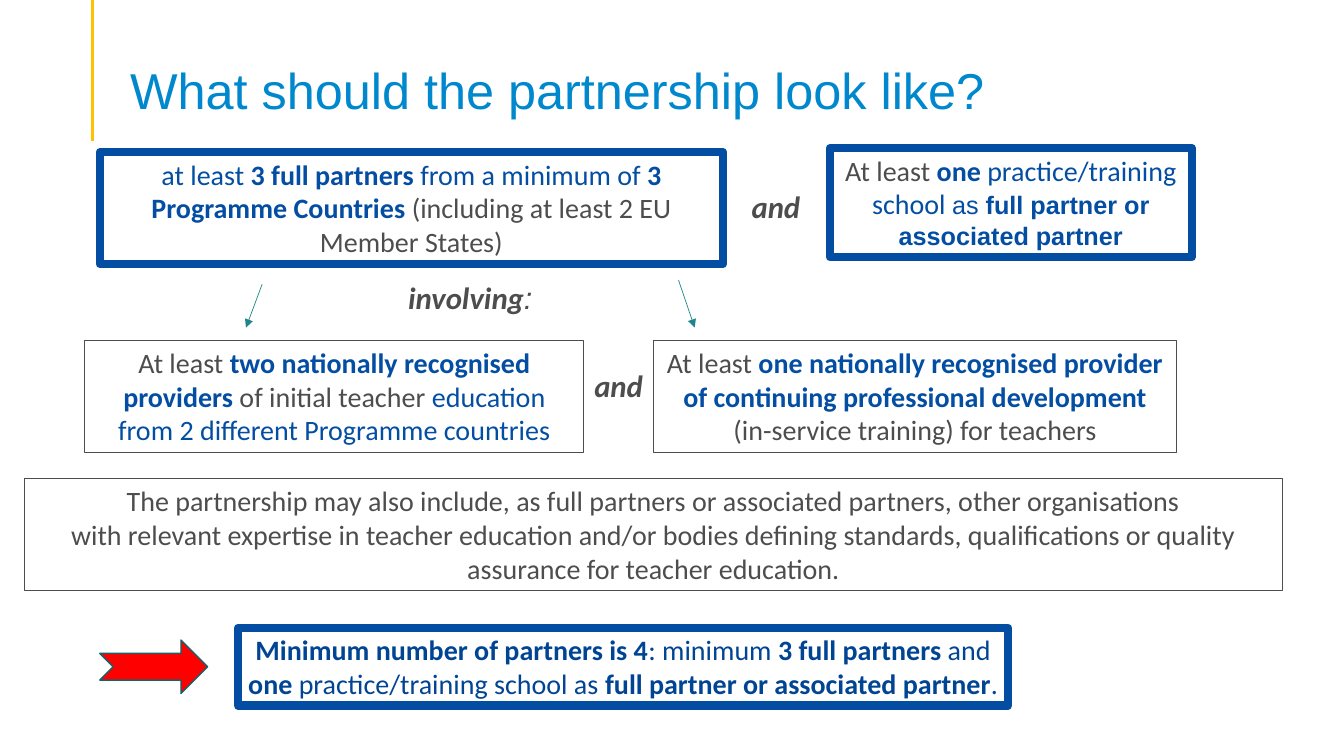
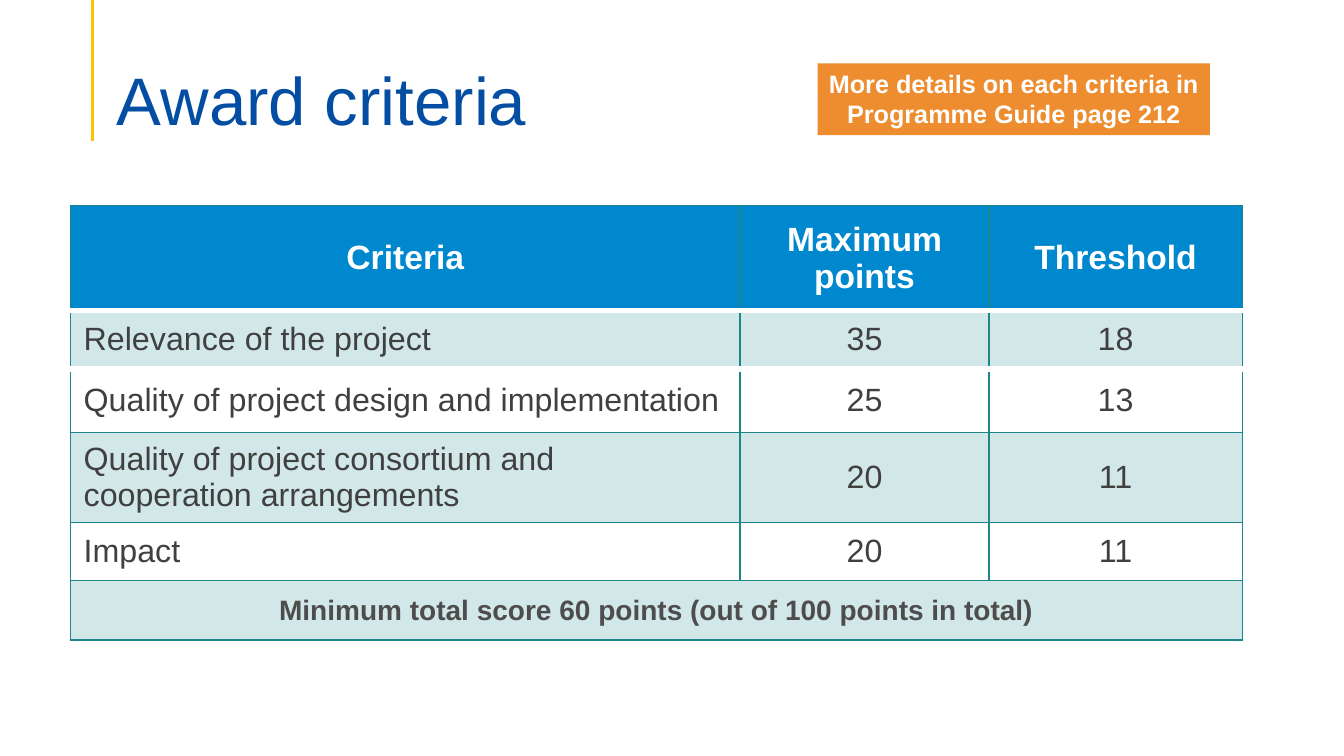
"""Build two slides on the partnership rules and the award criteria."""
from itertools import accumulate

from lxml.etree import SubElement
from pptx import Presentation
from pptx.dml.color import RGBColor
from pptx.enum.shapes import MSO_CONNECTOR, MSO_SHAPE
from pptx.enum.text import MSO_ANCHOR, MSO_AUTO_SIZE, PP_ALIGN
from pptx.oxml.ns import qn
from pptx.util import Inches, Pt

NAVY = RGBColor(0x03, 0x4E, 0xA2)
DEEP_NAVY = RGBColor(0x00, 0x44, 0x94)
SKY = RGBColor(0x00, 0x88, 0xCE)
GREY = RGBColor(0x4D, 0x4D, 0x4D)
DARK_GREY = RGBColor(0x40, 0x40, 0x40)
TEAL = RGBColor(0x1E, 0x85, 0x8B)
DARK_TEAL = RGBColor(0x16, 0x62, 0x67)
PALE_TEAL = RGBColor(0xD2, 0xE7, 0xE8)
YELLOW = RGBColor(0xFF, 0xC0, 0x00)
ORANGE = RGBColor(0xED, 0x8D, 0x2F)
RED = RGBColor(0xFF, 0x00, 0x00)
WHITE = RGBColor(0xFF, 0xFF, 0xFF)

BLUE = {"color": NAVY}
STRONG = {"color": NAVY, "bold": True}
BOLD = {"bold": True}
ARIAL = {"font": "Arial", "size": 18}

THIN = (GREY, 0.75)
THICK = (NAVY, 6)
BOX_HEIGHT = 1.11
LOWER_TOP = 3.38

BOXES = [
    ((0.24, 4.75, 12.48, BOX_HEIGHT), THIN, GREY, [
        ["The partnership may also include, as full partners or associated partners, other organisations"],
        ["with relevant expertise in teacher education and/or bodies defining standards, "
         "qualifications or quality assurance for teacher education."]]),
    ((0.99, 1.51, 6.18, BOX_HEIGHT), THICK, NAVY, [
        ["at least ", ("3 full partners ", BOLD), "from a minimum of ", ("3", BOLD)],
        [("Programme Countries ", BOLD),
         ("(including at least 2 EU Member States)", {"color": GREY})]]),
    ((0.84, LOWER_TOP, 4.95, BOX_HEIGHT), THIN, GREY, [
        ["At least ", ("two nationally recognised providers ", STRONG), "of initial teacher ",
         ("education from 2 different Programme countries", BLUE)]]),
    ((6.48, LOWER_TOP, 5.19, BOX_HEIGHT), THIN, GREY, [
        ["At least ",
         ("one nationally recognised provider of continuing professional development ", STRONG),
         "(in-service training) for teachers"]]),
    ((8.23, 1.47, 3.59, 1.08), THICK, GREY, [
        ["At least ", ("one", STRONG), (" practice/training school ", BLUE),
         ("as ", BLUE | ARIAL), ("full partner or associated partner", STRONG | ARIAL)]]),
    ((2.36, 6.23, 7.64, 0.77), THICK, DEEP_NAVY, [
        [("Minimum number of partners is 4", BOLD), ": minimum ", ("3 full partners ", BOLD),
         "and ", ("one ", BOLD), "practice/training school as ",
         ("full partner or associated partner", BOLD), "."]]),
]
LINKING_WORDS = [
    ((5.79, 3.59, 0.69, 0.47), ["and"]),
    ((2.6, 2.72, 4.13, 0.47), ["involving", (":", {"font": "Arial", "bold": False})]),
    ((7.35, 1.81, 0.69, 0.47), ["and"]),
]
ARROWS = [((2.6, 2.82), (2.44, 3.25)), ((6.73, 2.78), (6.89, 3.25))]

CRITERIA = [
    ("Criteria", "Maximum points", "Threshold"),
    ("Relevance of the project", "35", "18"),
    ("Quality of project design and implementation", "25", "13"),
    ("Quality of project consortium and cooperation arrangements", "20", "11"),
    ("Impact", "20", "11"),
    ("Minimum total score 60 points (out of 100 points in total)", "", ""),
]
COLUMN_WIDTHS = [6.64, 2.47, 2.51]
ROW_HEIGHTS = [1.04, 0.58, 0.63, 0.89, 0.58, 0.59]
WHITE_EDGES = (1, 2)


def inches(values):
    return [Inches(value) for value in values]


def write_text(frame, paragraphs, size=20, font="Calibri", color=GREY, bold=False,
               italic=False, align=PP_ALIGN.CENTER, spacing=None):
    """Fill a frame with paragraphs of runs; a run may override the format."""
    for index, runs in enumerate(paragraphs):
        paragraph = frame.add_paragraph() if index else frame.paragraphs[0]
        paragraph.alignment = align
        if spacing:
            paragraph.line_spacing = spacing
        for item in runs:
            text, changes = (item, {}) if isinstance(item, str) else item
            style = {"size": size, "font": font, "color": color, "bold": bold} | changes
            run = paragraph.add_run()
            run.text = text
            run.font.size = Pt(style["size"])
            run.font.name = style["font"]
            run.font.color.rgb = style["color"]
            run.font.bold = style["bold"]
            run.font.italic = italic


def add_block(slide, box, kind=MSO_SHAPE.RECTANGLE, fill=None, line=None):
    shape = slide.shapes.add_shape(kind, *inches(box))
    shape.shadow.inherit = False
    if fill:
        shape.fill.solid()
        shape.fill.fore_color.rgb = fill
    else:
        shape.fill.background()
    if line:
        shape.line.color.rgb = line[0]
        shape.line.width = Pt(line[1])
    else:
        shape.line.fill.background()
    shape.text_frame.word_wrap = True
    shape.text_frame.vertical_anchor = MSO_ANCHOR.TOP
    return shape


def add_line(slide, start, end, color, width, arrow=False):
    connector = slide.shapes.add_connector(MSO_CONNECTOR.STRAIGHT, *inches(start + end))
    connector.line.color.rgb = color
    connector.line.width = Pt(width)
    properties = connector.element.spPr
    if arrow:
        SubElement(properties.find(qn("a:ln")), qn("a:tailEnd"), type="triangle")
    SubElement(properties, qn("a:effectLst"))
    return connector


def add_title(slide, text, box, anchor, bottom=0.05, **style):
    title = slide.shapes.title
    title.left, title.top, title.width, title.height = inches(box)
    frame = title.text_frame
    frame.auto_size = MSO_AUTO_SIZE.NONE
    frame.word_wrap = True
    frame.vertical_anchor = anchor
    frame.margin_bottom = Inches(bottom)
    write_text(frame, [[text]], font="Arial", align=PP_ALIGN.LEFT, **style)


def set_border(cell, side, color, width):
    line = SubElement(cell._tc.get_or_add_tcPr(), qn(f"a:{side}"), w=str(Pt(width)))
    SubElement(SubElement(line, qn("a:solidFill")), qn("a:srgbClr"), val=str(color))


def format_cell(cell, text, row, column):
    last = len(CRITERIA) - 1
    cell.vertical_anchor = MSO_ANCHOR.MIDDLE
    cell.margin_left = cell.margin_right = Inches(0.13)
    cell.margin_top = cell.margin_bottom = Inches(0.07)
    for side in ("lnL", "lnR"):
        set_border(cell, side, TEAL, 1)
    for side, edge in (("lnT", row), ("lnB", row + 1)):
        set_border(cell, side, *((WHITE, 4.5) if edge in WHITE_EDGES else (TEAL, 1)))
    if row == 0 or row % 2:
        cell.fill.solid()
        cell.fill.fore_color.rgb = PALE_TEAL if row else SKY
    else:
        cell.fill.background()
    size, color = {0: (24, WHITE), last: (20, GREY)}.get(row, (23, DARK_GREY))
    if text:
        write_text(cell.text_frame, [[text]], size=size, font="Arial", color=color,
                   bold=row in (0, last),
                   align=PP_ALIGN.CENTER if column or row in (0, last) else PP_ALIGN.LEFT)


def add_criteria_table(slide):
    size = [list(accumulate(lengths))[-1] for lengths in (COLUMN_WIDTHS, ROW_HEIGHTS)]
    table = slide.shapes.add_table(len(CRITERIA), len(COLUMN_WIDTHS),
                                   *inches([0.7, 2.04] + size)).table
    for column, width in zip(table.columns, inches(COLUMN_WIDTHS)):
        column.width = width
    for row, height in zip(table.rows, inches(ROW_HEIGHTS)):
        row.height = height
    for row, texts in enumerate(CRITERIA):
        for column, text in enumerate(texts):
            format_cell(table.cell(row, column), text, row, column)
    last = len(CRITERIA) - 1
    table.cell(last, 0).merge(table.cell(last, len(COLUMN_WIDTHS) - 1))


def build_partnership(slide):
    add_title(slide, "What should the partnership look like?", (1.19, 0.54, 8.89, 0.71),
              MSO_ANCHOR.TOP, size=36, color=SKY)
    for box, line, color, paragraphs in BOXES:
        shape = add_block(slide, box, line=line)
        write_text(shape.text_frame, paragraphs, color=color)
    for start, end in ARROWS:
        add_line(slide, start, end, TEAL, 0.5, arrow=True)
    for box, runs in LINKING_WORDS:
        frame = slide.shapes.add_textbox(*inches(box)).text_frame
        frame.word_wrap = len(runs) > 1
        write_text(frame, [runs], size=22, bold=True, italic=True)
    add_block(slide, (0.99, 6.35, 1.07, 0.53), MSO_SHAPE.NOTCHED_RIGHT_ARROW,
              fill=RED, line=(DARK_TEAL, 1))


def build_criteria(slide):
    add_title(slide, "Award criteria", (1.06, 0.53, 11.5, 0.86), MSO_ANCHOR.BOTTOM,
              bottom=0, size=48, color=NAVY, spacing=0.9)
    add_criteria_table(slide)
    note = add_block(slide, (8.11, 0.63, 3.89, 0.71), fill=ORANGE)
    write_text(note.text_frame, [["More details on each criteria in Programme Guide page 212"]],
               size=18, font="Arial", color=WHITE, bold=True)


def main():
    presentation = Presentation()
    presentation.slide_width, presentation.slide_height = inches((13.33, 7.5))
    layout = presentation.slide_layouts.get_by_name("Title Only")
    slides = [presentation.slides.add_slide(layout) for _ in range(2)]
    title_rule = add_line(slides[0], (0.92, 0), (0.92, 1.4), YELLOW, 2.25)
    layout.shapes.element.append(title_rule.element)
    for build, slide in zip((build_partnership, build_criteria), slides):
        build(slide)
    presentation.save("out.pptx")


if __name__ == "__main__":
    main()
